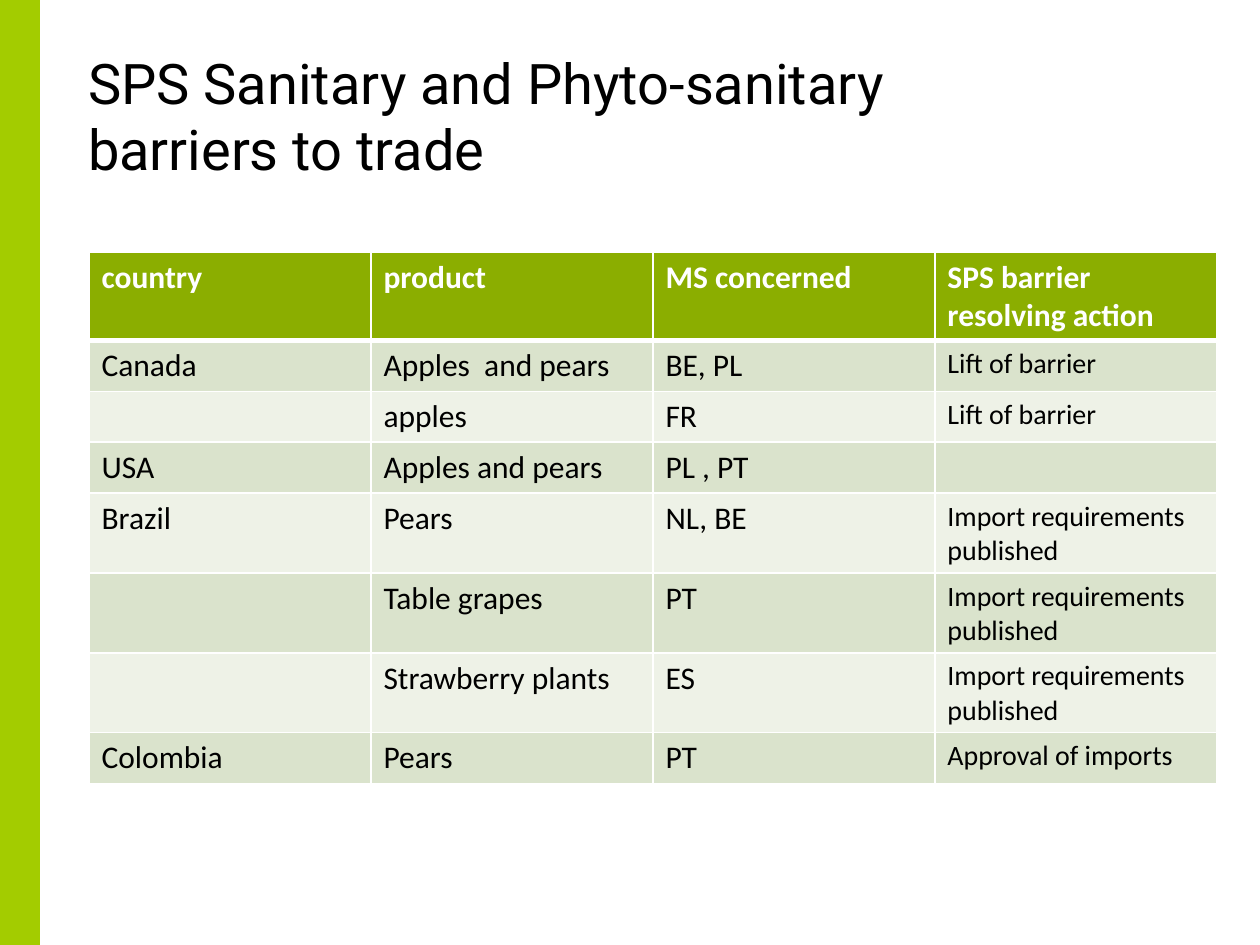
from lxml import etree
from pptx import Presentation
from pptx.dml.color import RGBColor
from pptx.enum.shapes import MSO_SHAPE
from pptx.enum.text import MSO_ANCHOR
from pptx.oxml.ns import qn
from pptx.util import Emu, Pt

RECT = MSO_SHAPE.RECTANGLE
TOP = MSO_ANCHOR.TOP
BLANK = 6
PX_PER_INCH = 126

ROWS = [
    ["country", "product", "MS concerned", "SPS barrier resolving action"],
    ["Canada", "Apples  and pears", "BE, PL", "Lift of barrier"],
    ["", "apples", "FR", "Lift of barrier"],
    ["USA", "Apples and pears", "PL , PT", ""],
    ["Brazil", "Pears", "NL, BE", "Import requirements published"],
    ["", "Table grapes", "PT", "Import requirements published"],
    ["", "Strawberry plants", "ES", "Import requirements published"],
    ["Colombia", "Pears", "PT", "Approval of imports"],
]


def px(n):
    return Emu(round(n * 914400 / PX_PER_INCH))


def rgb(value):
    return RGBColor.from_string(value)


def write(tf, text, size=18, font="Calibri", color="000000", bold=False, spacing=None):
    p = tf.paragraphs[0]
    if spacing:
        p.line_spacing = Pt(spacing)
    for i, line in enumerate(text.split("\n")):
        if i:
            p.add_line_break()
        r = p.add_run()
        r.text = line
        r.font.size = Pt(size)
        r.font.name = font
        r.font.bold = bold
        r.font.color.rgb = rgb(color)


def set_borders(cell, color, **widths):
    tcPr = cell._tc.get_or_add_tcPr()
    for side in "LRTB":
        ln = etree.SubElement(tcPr, qn(f"a:ln{side}"), w=str(Pt(widths.get(side, 1))))
        fill = etree.SubElement(ln, qn("a:solidFill"))
        etree.SubElement(fill, qn("a:srgbClr"), val=color)


class Deck:
    BAR = "A3CC00"
    HEADER = "8BAE00"
    BANDS = ("DAE3CC", "EEF2E7")
    WHITE = "FFFFFF"

    def __init__(self, width, height):
        self.prs = Presentation()
        self.prs.slide_width = px(width)
        self.prs.slide_height = px(height)
        self.s = self.prs.slides.add_slide(self.prs.slide_layouts[BLANK])

    def bar(self, x, y, w, h):
        sp = self.s.shapes.add_shape(RECT, px(x), px(y), px(w), px(h))
        sp.shadow.inherit = False
        sp.fill.solid()
        sp.fill.fore_color.rgb = rgb(self.BAR)
        sp.line.fill.background()

    def title(self, text, x, y, w, h):
        tf = self.s.shapes.add_textbox(px(x), px(y), px(w), px(h)).text_frame
        tf.word_wrap = True
        tf.vertical_anchor = TOP
        tf.margin_left = tf.margin_right = tf.margin_top = tf.margin_bottom = 0
        write(tf, text, size=32, font="Roboto", spacing=38)

    def table(self, rows, x, y, w, row_h):
        n_cols = len(rows[0])
        frame = self.s.shapes.add_table(
            len(rows), n_cols, px(x), px(y), px(w), px(row_h * len(rows)))
        for i, row in enumerate(rows):
            frame.table.rows[i].height = px(row_h)
            header = i == 0
            for j, text in enumerate(row):
                cell = frame.table.cell(i, j)
                set_borders(cell, self.WHITE, T=3 if i == 1 else 1, B=3 if header else 1)
                cell.fill.solid()
                cell.fill.fore_color.rgb = rgb(
                    self.HEADER if header else self.BANDS[(i - 1) % 2])
                if text:
                    write(cell.text_frame, text,
                          size=16 if j == n_cols - 1 and not header else 18,
                          color=self.WHITE if header else "000000", bold=header)


def main():
    deck = Deck(1260, 945)
    deck.bar(0, 0, 40, 945)
    deck.title("SPS Sanitary and Phyto-sanitary \nbarriers to trade", 88, 49, 1128, 154)
    deck.table(ROWS, 89, 252, 1128, 51)
    deck.prs.save("out.pptx")


if __name__ == "__main__":
    main()
